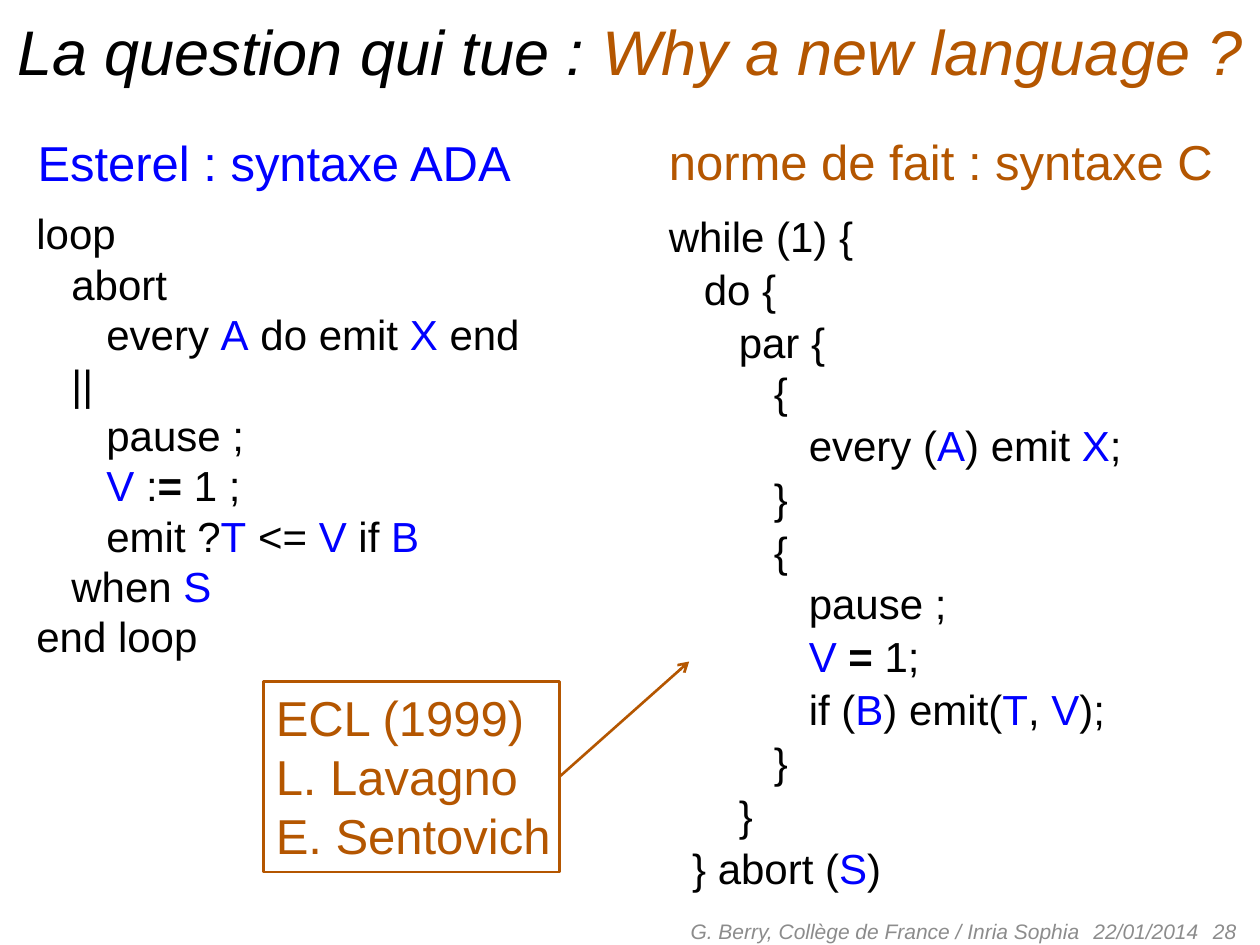
import itertools

import lxml.etree
import pptx
import pptx.dml.color
import pptx.enum.shapes
import pptx.enum.text
import pptx.oxml.ns
import pptx.util

Inches = pptx.util.Inches
Pt = pptx.util.Pt
ALIGN = pptx.enum.text.PP_ALIGN
ANCHOR = pptx.enum.text.MSO_ANCHOR
FIT = pptx.enum.text.MSO_AUTO_SIZE

BLACK, BLUE, BROWN, GREY = "000000", "0000FF", "B45600", "8C8C8C"
SPACE = 0.0926  # inches taken by one space of 24 pt Arial

# Each line: leading columns, code
ADA_CODE = [
    (0, "loop"),
    (3, "abort"),
    (6, "every A do emit X end"),
    (3, "||"),
    (6, "pause ;"),
    (6, "V := 1 ;"),
    (6, "emit ?T <= V if B"),
    (3, "when S"),
    (0, "end loop"),
]
C_CODE = [
    (0, "while (1) {"),
    (3, "do {"),
    (6, "par {"),
    (9, "{"),
    (12, "every (A) emit X;"),
    (9, "}"),
    (9, "{"),
    (12, "pause ;"),
    (12, "V = 1;"),
    (12, "if (B) emit(T, V);"),
    (9, "}"),
    (6, "}"),
    (2, "} abort (S)"),
]


def rgb(color):
    return pptx.dml.color.RGBColor.from_string(color)


def style_run(run, size, color, bold=False, italic=False):
    font = run.font
    font.name, font.size = "Arial", Pt(size)
    font.bold, font.italic = bold, italic
    font.color.rgb = rgb(color)


def fit_to_text(frame):
    frame.word_wrap = False
    frame.auto_size = FIT.SHAPE_TO_FIT_TEXT
    frame.margin_left, frame.margin_right = Inches(0.1), Inches(0.04)
    frame.margin_top = frame.margin_bottom = Inches(0.05)


def add_text_box(slide, left, top, width, height):
    box = slide.shapes.add_textbox(Inches(left), Inches(top), Inches(width), Inches(height))
    return box.text_frame


def add_title(slide, left, top, width, height):
    title = slide.shapes.title
    title.left, title.top = Inches(left), Inches(top)
    title.width, title.height = Inches(width), Inches(height)
    frame = title.text_frame
    frame.word_wrap = True
    frame.auto_size = FIT.SHAPE_TO_FIT_TEXT
    frame.vertical_anchor = ANCHOR.TOP
    paragraph = frame.paragraphs[0]
    paragraph.alignment = ALIGN.CENTER
    for words, color in (("La question qui tue : ", BLACK), ("Why a new language ?", BROWN)):
        run = paragraph.add_run()
        run.text = words
        style_run(run, 36, color, italic=True)


def add_heading(slide, text, color, left, top, width, height):
    frame = add_text_box(slide, left, top, width, height)
    fit_to_text(frame)
    frame.text = text
    frame.paragraphs[0].line_spacing = 1.05
    style_run(frame.paragraphs[0].runs[0], 28, color)


def add_code(slide, lines, spacing, left, top, width, height):
    """Signals (capital letters) are blue and assignment signs bold."""
    frame = add_text_box(slide, left, top, width, height)
    fit_to_text(frame)
    for number, (columns, code) in enumerate(lines):
        paragraph = frame.paragraphs[0] if number == 0 else frame.add_paragraph()
        paragraph.line_spacing = 1.0 if code == "{" and lines[number - 1][1] == "par {" else spacing
        if columns:
            margin = Inches(columns * SPACE)
            paragraph._p.get_or_add_pPr().set("marL", str(margin))
        assigns = "<=" not in code
        for (signal, bold), letters in itertools.groupby(
            code, key=lambda letter: (letter.isupper(), letter == "=" and assigns)
        ):
            run = paragraph.add_run()
            run.text = "".join(letters)
            style_run(run, 24, BLUE if signal else BLACK, bold=bold)


def add_ecl_note(slide, left, top, width, height, tip):
    """Framed note with an arrow from its right side to the tip."""
    note = slide.shapes.add_shape(
        pptx.enum.shapes.MSO_SHAPE.RECTANGLE,
        Inches(left), Inches(top), Inches(width), Inches(height),
    )
    note.shadow.inherit = False
    note.fill.background()
    note.line.color.rgb = rgb(BROWN)
    note.line.width = Pt(1.5)
    frame = note.text_frame
    fit_to_text(frame)
    frame.vertical_anchor = ANCHOR.TOP
    frame.text = "ECL (1999)\nL. Lavagno\nE. Sentovich"
    for paragraph in frame.paragraphs:
        paragraph.alignment = ALIGN.LEFT
        style_run(paragraph.runs[0], 28, BROWN)

    arrow = slide.shapes.add_connector(
        pptx.enum.shapes.MSO_CONNECTOR.STRAIGHT,
        Inches(left + width), Inches(top + height / 2), Inches(tip[0]), Inches(tip[1]),
    )
    arrow.begin_connect(note, 3)
    arrow.line.color.rgb = rgb(BROWN)
    arrow.line.width = Pt(1.5)
    qn = pptx.oxml.ns.qn
    lxml.etree.SubElement(arrow.line._get_or_add_ln(), qn("a:tailEnd"), type="arrow")
    lxml.etree.SubElement(arrow._element.spPr, qn("a:effectLst"))


def add_footer(slide, top, height):
    for text, left, width, alignment in (
        ("22/01/2014", 8.58, 2.33, ALIGN.LEFT),
        ("28", 7.58, 2.33, ALIGN.RIGHT),
        ("G. Berry, Collège de France / Inria Sophia", 4.61, 4.06, ALIGN.RIGHT),
    ):
        frame = add_text_box(slide, left, top, width, height)
        frame.word_wrap = True
        frame.vertical_anchor = ANCHOR.MIDDLE
        frame.text = text
        frame.paragraphs[0].alignment = alignment
        style_run(frame.paragraphs[0].runs[0], 12, GREY, italic=True)


def main():
    deck = pptx.Presentation()
    deck.slide_width, deck.slide_height = Inches(10), Inches(7.5)
    slide = deck.slides.add_slide(deck.slide_layouts.get_by_name("Title Only"))
    add_footer(slide, 7.19, 0.4)
    add_title(slide, 0, 0.05, 10, 0.71)
    add_heading(slide, "Esterel : syntaxe ADA", BLUE, 0.2, 0.98, 3.96, 0.56)
    add_heading(slide, "norme de fait : syntaxe C", BROWN, 5.21, 0.97, 4.51, 0.56)
    add_code(slide, ADA_CODE, 1.0, 0.19, 1.6, 4.01, 3.74)
    add_code(slide, C_CODE, 1.05, 5.21, 1.6, 3.76, 5.61)
    add_ecl_note(slide, 2.09, 5.41, 2.35, 1.51, tip=(5.47, 5.25))
    deck.save("out.pptx")


if __name__ == "__main__":
    main()
